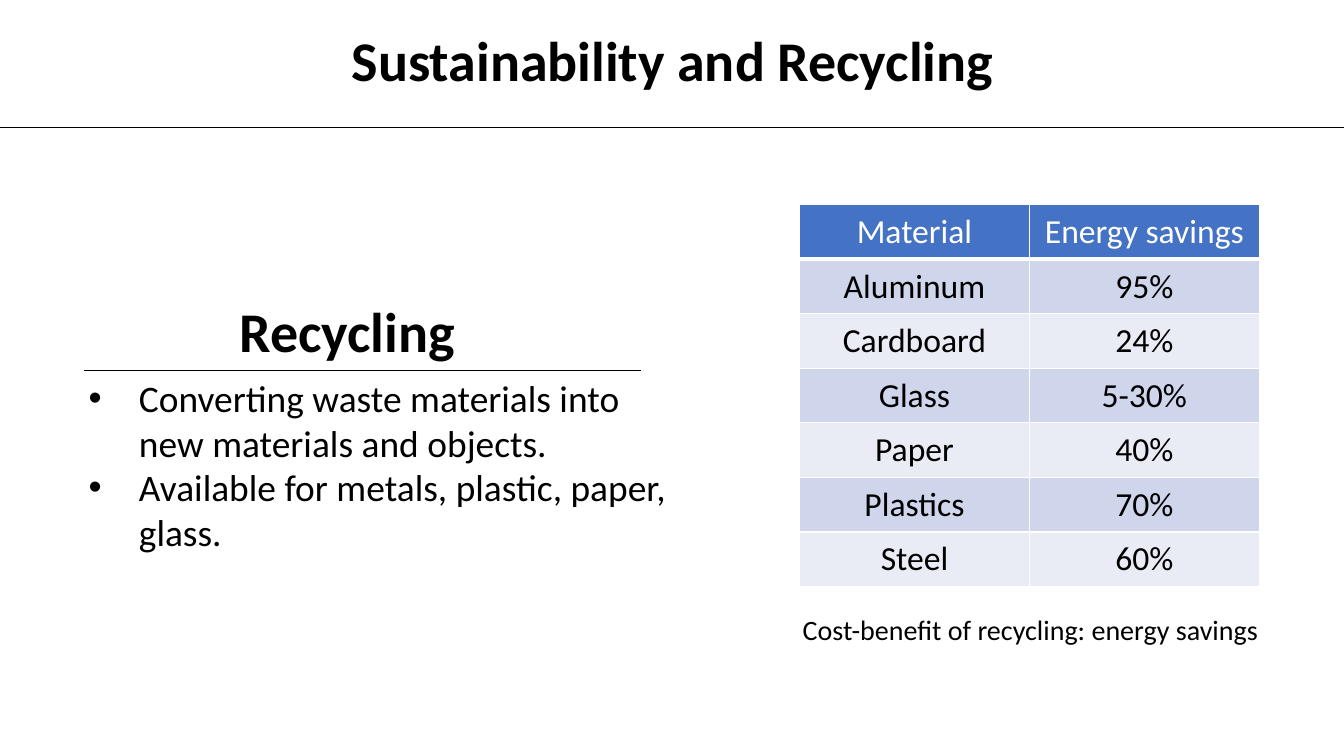
from lxml import etree
from pptx import Presentation
from pptx.dml.color import RGBColor
from pptx.enum import shapes, text
from pptx.oxml.ns import qn
from pptx.util import Inches, Pt

TITLE = "Sustainability and Recycling"
HEADING = "Recycling"
POINTS = [
    "Converting waste materials into new materials and objects.",
    "Available for metals, plastic, paper, glass.",
]
SAVINGS = [
    ("Material", "Energy savings"),
    ("Aluminum", "95%"),
    ("Cardboard", "24%"),
    ("Glass", "5-30%"),
    ("Paper", "40%"),
    ("Plastics", "70%"),
    ("Steel", "60%"),
]
CAPTION = "Cost-benefit of recycling: energy savings"
RULES = [(0, 13.33, 1.26), (0.83, 6.36, 3.67)]  # left, right, height on page

THEME = {
    "font": "Calibri",
    "ink": "000000", "paper": "FFFFFF", "header": "4472C4",
    "bands": ("E9EBF5", "CFD5EA"),
    "title": 40, "body": 26.7, "cell": 24, "caption": 20,
    "rule": 0.5, "border": 1, "header_border": 3,
}
CENTER = text.PP_ALIGN.CENTER
MIDDLE = text.MSO_ANCHOR.MIDDLE
INSETS = {
    "margin_left": Inches(0.13), "margin_right": Inches(0.13),
    "margin_top": Inches(0.07), "margin_bottom": Inches(0.07),
}


def set_all(target, values):
    for name, value in values.items():
        setattr(target, name, value)


def write(para, words, size, color=THEME["ink"], bold=False, **layout):
    set_all(para, layout)
    span = para.add_run()
    span.text = words
    set_all(span.font, {"name": THEME["font"], "size": Pt(size), "bold": bold})
    span.font.color.rgb = RGBColor.from_string(color)


def add_box(page, place, **frame_values):
    frame = page.shapes.add_textbox(*map(Inches, place)).text_frame
    set_all(frame, {"word_wrap": True, **frame_values})
    return frame


def add_bullet(para):
    props = para._p.get_or_add_pPr()
    props.set("marL", str(Inches(1.17)))
    props.set("indent", str(Inches(-0.5)))
    etree.SubElement(props, qn("a:buFont")).set("typeface", "Arial")
    etree.SubElement(props, qn("a:buChar")).set("char", "•")


def add_rule(page, left, right, height):
    ends = map(Inches, (left, height, right, height))
    rule = page.shapes.add_connector(shapes.MSO_CONNECTOR.STRAIGHT, *ends)
    rule.line.color.rgb = RGBColor.from_string(THEME["ink"])
    rule.line.width = Pt(THEME["rule"])
    etree.SubElement(rule._element.spPr, qn("a:effectLst"))


def add_borders(cell, bottom):
    """Draw the cell's edges; they must precede its fill in the XML."""
    props = cell._tc.get_or_add_tcPr()
    for side in "LRTB":
        width = bottom if side == "B" else THEME["border"]
        edge = etree.SubElement(props, qn("a:ln" + side), w=str(Pt(width)))
        fill = etree.SubElement(edge, qn("a:solidFill"))
        etree.SubElement(fill, qn("a:srgbClr"), val=THEME["paper"])


def add_savings_table(page):
    place = map(Inches, (7.93, 2.03, 4.56, 3.79))
    table = page.shapes.add_table(len(SAVINGS), len(SAVINGS[0]), *place).table
    for row, values in enumerate(SAVINGS):
        header = row == 0
        fill = THEME["header"] if header else THEME["bands"][row % 2]
        color = THEME["paper"] if header else THEME["ink"]
        bottom = THEME["header_border" if header else "border"]
        for column, value in enumerate(values):
            cell = table.cell(row, column)
            set_all(cell, INSETS)
            add_borders(cell, bottom)
            cell.fill.solid()
            cell.fill.fore_color.rgb = RGBColor.from_string(fill)
            write(cell.text_frame.paragraphs[0], value, THEME["cell"], color,
                  alignment=CENTER)


def main():
    deck = Presentation()
    deck.slide_width, deck.slide_height = Inches(13.33), Inches(7.5)
    page = deck.slides.add_slide(deck.slide_layouts[6])

    points = add_box(page, (0.11, 3.67, 6.67, 1.9))
    for index, point in enumerate(POINTS):
        para = points.add_paragraph() if index else points.paragraphs[0]
        add_bullet(para)
        write(para, point, THEME["body"])

    caption = add_box(page, (7.67, 5.91, 5.1, 0.71),
                      vertical_anchor=MIDDLE, **INSETS)
    write(caption.paragraphs[0], CAPTION, THEME["caption"],
          alignment=CENTER, line_spacing=0.9)

    add_savings_table(page)

    for words, place in [(TITLE, (3.34, 0.2, 6.66, 0.77)),
                         (HEADING, (2.26, 2.89, 2.37, 0.77))]:
        box = add_box(page, place, word_wrap=False)
        write(box.paragraphs[0], words, THEME["title"], bold=True,
              alignment=CENTER)

    for rule in RULES:
        add_rule(page, *rule)

    deck.save("out.pptx")


if __name__ == "__main__":
    main()
